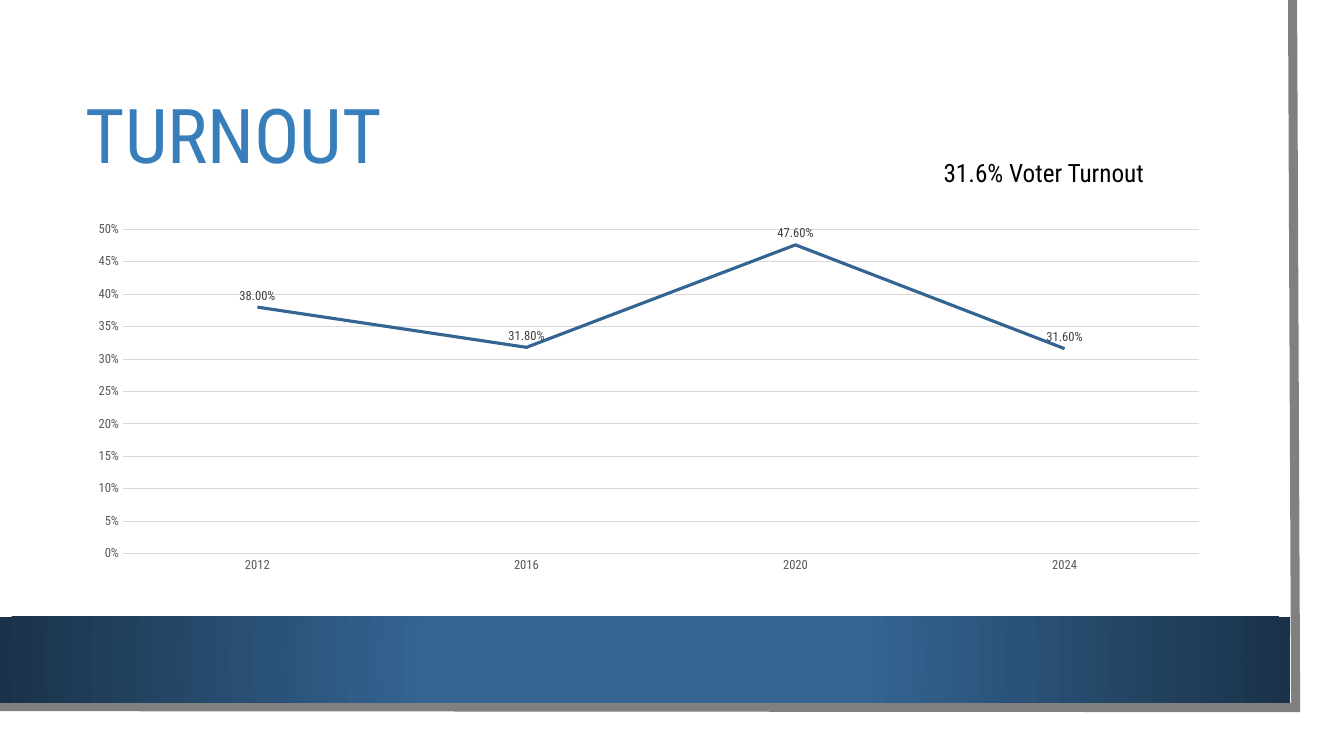
from lxml import etree
from pptx import Presentation
from pptx.chart.data import CategoryChartData
from pptx.dml.color import RGBColor
from pptx.enum.chart import XL_CHART_TYPE, XL_LABEL_POSITION, XL_TICK_MARK, XL_MARKER_STYLE
from pptx.enum.shapes import MSO_SHAPE
from pptx.enum.text import MSO_ANCHOR, MSO_AUTO_SIZE, PP_ALIGN
from pptx.oxml import parse_xml
from pptx.oxml.ns import nsdecls, qn
from pptx.util import Inches, Pt

LINE_CHART = XL_CHART_TYPE.LINE
ABOVE = XL_LABEL_POSITION.ABOVE
NO_TICK = XL_TICK_MARK.NONE
NO_MARKER = XL_MARKER_STYLE.NONE
RECTANGLE = MSO_SHAPE.RECTANGLE
MIDDLE = MSO_ANCHOR.MIDDLE
LEFT = PP_ALIGN.LEFT
NO_AUTOSIZE = MSO_AUTO_SIZE.NONE
GROW = MSO_AUTO_SIZE.SHAPE_TO_FIT_TEXT

FONT = "Roboto Condensed"
BLUE = RGBColor(0x34, 0x64, 0x92)
NAVY = RGBColor(0x1A, 0x32, 0x49)
TITLE_BLUE = RGBColor(0x37, 0x7E, 0xBA)
FRAME_GREY = RGBColor(0x80, 0x80, 0x80)
GRID_GREY = RGBColor(0xD9, 0xD9, 0xD9)
AXIS_GREY = RGBColor(0x59, 0x59, 0x59)
LABEL_GREY = RGBColor(0x40, 0x40, 0x40)
BLACK = RGBColor(0, 0, 0)

SLIDE_W, SLIDE_H = 13.33, 7.5
MARGIN = 0.75
CONTENT_W = 11.37
TURNOUT = {"2012": 0.38, "2016": 0.318, "2020": 0.476, "2024": 0.316}


def inches(box):
    """Turn a box of inches into lengths."""
    return [Inches(length) for length in box]


def style_font(font, size, color):
    """Apply the deck font at a size and colour."""
    font.name = FONT
    font.size = Pt(size)
    font.color.rgb = color


def add_frame(slide, box):
    """Draw the grey edge down the right and along the bottom of the box."""
    left, top, width, height = box
    right, bottom = left + width, top + height
    builder = slide.shapes.build_freeform(Inches(right - 0.03), Inches(top), scale=1.0)
    corner = (Inches(right), Inches(bottom))
    builder.add_line_segments([corner, (Inches(left), Inches(bottom - 0.01))], close=False)
    edge = builder.convert_to_shape()
    edge.shadow.inherit = False
    edge.fill.background()
    edge.line.color.rgb = FRAME_GREY
    edge.line.width = Pt(6.5)
    etree.SubElement(edge.line._get_or_add_ln(), qn("a:miter"), lim="800000")


def add_band(slide, box):
    """Fill the box with a gradient radiating from its centre."""
    band = slide.shapes.add_shape(RECTANGLE, *inches(box))
    band.shadow.inherit = False
    band.line.fill.background()
    band.fill.gradient()
    for stop, (position, color) in zip(band.fill.gradient_stops, [(0.34, BLUE), (1, NAVY)]):
        stop.position = position
        stop.color.rgb = color
    gradient = band._element.spPr.find(qn("a:gradFill"))
    gradient.replace(gradient.find(qn("a:lin")), parse_xml(
        f'<a:path {nsdecls("a")} path="circle">'
        '<a:fillToRect l="50000" t="50000" r="50000" b="50000"/></a:path>'))


def add_title(slide, box):
    """Place the slide title in the box."""
    title = slide.shapes.title
    title.left, title.top, title.width, title.height = inches(box)
    frame = title.text_frame
    frame.vertical_anchor = MIDDLE
    frame.auto_size = NO_AUTOSIZE
    heading = frame.paragraphs[0]
    heading.alignment = LEFT
    heading.line_spacing = 0.9
    run = heading.add_run()
    run.text = "TURNOUT"
    style_font(run.font, 54, TITLE_BLUE)


def add_turnout_chart(slide, box):
    """Plot turnout by election year in the box."""
    data = CategoryChartData(number_format="0.00%")
    data.categories = list(TURNOUT)
    data.add_series("Series 1", list(TURNOUT.values()))
    chart = slide.shapes.add_chart(LINE_CHART, *inches(box), data).chart
    style_font(chart.font, 10, BLACK)
    chart.has_legend = False
    chart.has_title = False

    years, shares = chart.category_axis, chart.value_axis
    for axis in (years, shares):
        axis.major_tick_mark = axis.minor_tick_mark = NO_TICK
        style_font(axis.tick_labels.font, 9, AXIS_GREY)
    shares.minimum_scale, shares.maximum_scale, shares.major_unit = 0, 0.5, 0.05
    shares.tick_labels.number_format = "0%"
    shares.tick_labels.number_format_is_linked = False
    shares.format.line.fill.background()
    shares.has_major_gridlines = True
    for rule in (years.format.line, shares.major_gridlines.format.line):
        rule.color.rgb = GRID_GREY
        rule.width = Pt(0.75)

    plot = chart.plots[0]
    plot.vary_by_categories = False
    series = plot.series[0]
    series.smooth = False
    series.marker.style = NO_MARKER
    series.format.line.color.rgb = BLUE
    series.format.line.width = Pt(2.25)
    labels = series.data_labels
    labels.show_value = True
    labels.position = ABOVE
    labels.number_format = "0.00%"
    labels.number_format_is_linked = False
    style_font(labels.font, 9, LABEL_GREY)


def add_callout(slide, box):
    """Write the latest turnout figure in the box."""
    frame = slide.shapes.add_textbox(*inches(box)).text_frame
    frame.word_wrap = True
    frame.auto_size = GROW
    run = frame.paragraphs[0].add_run()
    run.text = "31.6% Voter Turnout"
    style_font(run.font, 18, BLACK)


def main():
    """Build and save the turnout slide."""
    deck = Presentation()
    deck.slide_width, deck.slide_height = Inches(SLIDE_W), Inches(SLIDE_H)
    slide = deck.slides.add_slide(deck.slide_layouts.get_by_name("Title Only"))
    add_frame(slide, (-0.03, 0, 12.88, 7.02))
    add_band(slide, (0, 6.12, 12.8, 0.85))
    add_title(slide, (MARGIN, MARGIN, CONTENT_W, 1.26))
    add_turnout_chart(slide, (MARGIN, 2.13, CONTENT_W, 3.62))
    add_callout(slide, (9.26, 1.51, 2.5, 0.4))
    deck.save("out.pptx")


if __name__ == "__main__":
    main()
